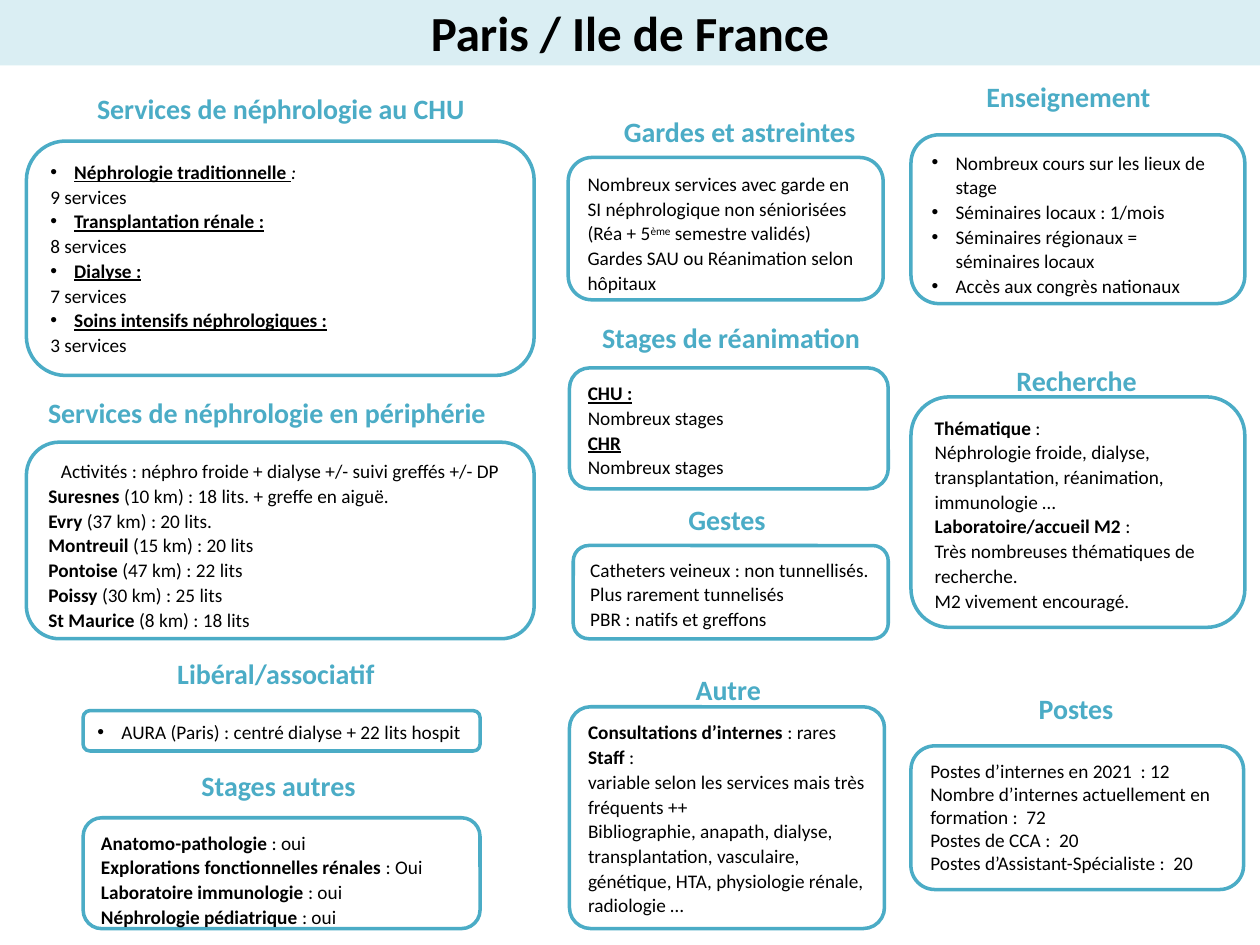
from lxml.etree import SubElement
from pptx import Presentation
from pptx.dml.color import RGBColor
from pptx.enum.shapes import MSO_SHAPE
from pptx.enum.text import MSO_ANCHOR, PP_ALIGN
from pptx.oxml.ns import qn
from pptx.util import Inches, Pt

TEAL = RGBColor(0x4B, 0xAC, 0xC6)
PALE_BLUE = RGBColor(0xDA, 0xEE, 0xF3)
BLACK = RGBColor(0, 0, 0)
WHITE = RGBColor(0xFF, 0xFF, 0xFF)

BOLD = {"bold": True}
UNDERLINED = {"bold": True, "underline": True}
ITALIC = {"italic": True}
BODY = {"name": "Calibri", "size": Pt(11)}
HEADING = {"name": "Calibri", "size": Pt(16), "bold": True}
TITLE = {"name": "Calibri", "size": Pt(28), "bold": True}


def line(*spans, bullet=False, align=PP_ALIGN.LEFT):
    spans = [span if isinstance(span, tuple) else (span, {}) for span in spans]
    return {"spans": spans, "bullet": bullet, "align": align}


def labelled(label, detail):
    return line((label, BOLD), detail)


def underlined(text, *rest, bullet=False):
    return line((text, UNDERLINED), *rest, bullet=bullet)


def add_bullet(paragraph):
    properties = paragraph._p.get_or_add_pPr()
    properties.set("marL", str(Inches(0.19)))
    properties.set("indent", str(-Inches(0.19)))
    color = SubElement(properties, qn("a:buClr"))
    SubElement(color, qn("a:srgbClr"), val=str(BLACK))
    SubElement(properties, qn("a:buFont"), typeface="Arial")
    SubElement(properties, qn("a:buChar"), char="•")


def write(shape, lines, font, color, spacing=1.07):
    frame = shape.text_frame
    frame.word_wrap = True
    frame.vertical_anchor = MSO_ANCHOR.TOP
    for index, entry in enumerate(lines):
        paragraph = frame.add_paragraph() if index else frame.paragraphs[0]
        if entry["bullet"]:
            add_bullet(paragraph)
        paragraph.alignment = entry["align"]
        paragraph.line_spacing = spacing
        for text, style in entry["spans"]:
            span = paragraph.add_run()
            span.text = text
            span.font.color.rgb = color
            for key, value in {**font, **style}.items():
                if key == "baseline":
                    span.font._element.set(key, value)
                else:
                    setattr(span.font, key, value)


def add_panel(page, kind, place, fill):
    panel = page.shapes.add_shape(kind, *map(Inches, place))
    panel.shadow.inherit = False
    panel.fill.solid()
    panel.fill.fore_color.rgb = fill
    return panel


def add_banner(page, text):
    banner = add_panel(page, MSO_SHAPE.RECTANGLE, (0, -0.06, 10, 0.58), PALE_BLUE)
    banner.line.fill.background()
    write(banner, [line(text, align=PP_ALIGN.CENTER)], TITLE, BLACK)


def add_section(page, heading, heading_place, box_place, lines,
                align=PP_ALIGN.CENTER, corner=0.167, spacing=1.07):
    box = add_panel(page, MSO_SHAPE.ROUNDED_RECTANGLE, box_place, WHITE)
    box.adjustments[0] = corner
    box.line.color.rgb = TEAL
    box.line.width = Pt(2)
    write(box, lines, BODY, BLACK, spacing)
    label = page.shapes.add_textbox(*map(Inches, heading_place))
    write(label, [line(heading, align=align)], HEADING, TEAL)


def add_left_column(page):
    add_section(page, "Services de néphrologie au CHU",
                (0.35, 0.66, 3.76, 0.42), (0.21, 1.12, 4.03, 1.86), [
                    underlined("Néphrologie traditionnelle ", (":", ITALIC), bullet=True),
                    line("9 services"),
                    underlined("Transplantation rénale :", bullet=True),
                    line("8 services"),
                    underlined("Dialyse :", bullet=True),
                    line("7 services"),
                    underlined("Soins intensifs néphrologiques :", bullet=True),
                    line("3 services")])
    add_section(page, "Services de néphrologie en périphérie",
                (0, 3.07, 4.24, 0.44), (0.21, 3.51, 4.03, 1.56), [
                    line("Activités : néphro froide + dialyse +/- suivi greffés +/- DP",
                         align=PP_ALIGN.CENTER),
                    labelled("Suresnes", " (10 km) : 18 lits. + greffe en aiguë."),
                    labelled("Evry ", "(37 km) : 20 lits."),
                    labelled("Montreuil ", "(15 km) : 20 lits"),
                    labelled("Pontoise ", "(47 km) : 22 lits"),
                    labelled("Poissy ", "(30 km) : 25 lits"),
                    labelled("St Maurice ", "(8 km) : 18 lits")])
    add_section(page, "Libéral/associatif",
                (1.27, 5.14, 1.84, 0.5), (0.66, 5.64, 3.15, 0.32),
                [line("AURA (Paris) : centré dialyse + 22 lits hospit", bullet=True)])
    add_section(page, "Stages autres ",
                (1.49, 6.03, 1.49, 0.38), (0.66, 6.49, 3.15, 0.88), [
                    labelled("Anatomo-pathologie ", ": oui"),
                    labelled("Explorations fonctionnelles rénales ", ": Oui"),
                    labelled("Laboratoire immunologie ", ": oui"),
                    labelled("Néphrologie pédiatrique ", ": oui")])


def add_middle_column(page):
    add_section(page, "Gardes et astreintes",
                (4.51, 0.84, 2.72, 0.5), (4.51, 1.25, 2.5, 1.13), [
                    line("Nombreux services avec garde en SI néphrologique "
                         "non séniorisées (Réa + 5",
                         ("ème", {"baseline": "30000"}), " semestre validés)"),
                    line("Gardes SAU ou Réanimation selon hôpitaux")])
    add_section(page, "Stages de réanimation",
                (4.68, 2.48, 2.36, 0.29), (4.52, 2.92, 2.53, 0.96), [
                    underlined("CHU :"), line("Nombreux stages"),
                    underlined("CHR"), line("Nombreux stages")],
                align=PP_ALIGN.LEFT)
    add_section(page, "Gestes ",
                (5.05, 3.92, 1.49, 0.38), (4.55, 4.33, 2.5, 0.74), [
                    line("Catheters veineux : non tunnellisés. Plus rarement tunnelisés"),
                    line("PBR : natifs et greffons")])
    add_section(page, "Autre ",
                (5.06, 5.27, 1.49, 0.4), (4.52, 5.61, 2.5, 1.76), [
                    labelled("Consultations d’internes ", ": rares"),
                    labelled("Staff", " :"),
                    line("variable selon les services mais très fréquents ++"),
                    line("Bibliographie, anapath, dialyse, transplantation, vasculaire, "
                         "génétique, HTA, physiologie rénale, radiologie …")],
                corner=0.095)


def add_right_column(page):
    add_section(page, "Enseignement",
                (7.73, 0.56, 1.69, 0.38), (7.23, 1.07, 2.65, 1.34),
                [line(text, bullet=True) for text in (
                    "Nombreux cours sur les lieux de stage",
                    "Séminaires locaux : 1/mois",
                    "Séminaires régionaux = séminaires locaux",
                    "Accès aux congrès nationaux")],
                align=PP_ALIGN.LEFT)
    add_section(page, "Recherche",
                (7.8, 2.82, 1.49, 0.38), (7.23, 3.15, 2.65, 1.83), [
                    labelled("Thématique", " :"),
                    line("Néphrologie froide, dialyse, transplantation, "
                         "réanimation, immunologie …"),
                    labelled("Laboratoire/accueil M2 ", ":"),
                    line("Très nombreuses thématiques de recherche."),
                    line("M2 vivement encouragé.")])
    add_section(page, "Postes",
                (7.43, 5.42, 2.22, 0.38), (7.23, 5.92, 2.64, 1.14),
                [line(text) for text in (
                    "Postes d’internes en 2021  : 12",
                    "Nombre d’internes actuellement en formation :  72",
                    "Postes de CCA :  20",
                    "Postes d’Assistant-Spécialiste :  20")],
                spacing=1.0)


def main():
    """Build the regional nephrology training overview slide."""
    deck = Presentation()
    deck.slide_width, deck.slide_height = Inches(10), Inches(7.5)
    page = deck.slides.add_slide(deck.slide_layouts[6])
    add_banner(page, "Paris / Ile de France")
    add_left_column(page)
    add_middle_column(page)
    add_right_column(page)
    deck.save("out.pptx")


if __name__ == "__main__":
    main()
